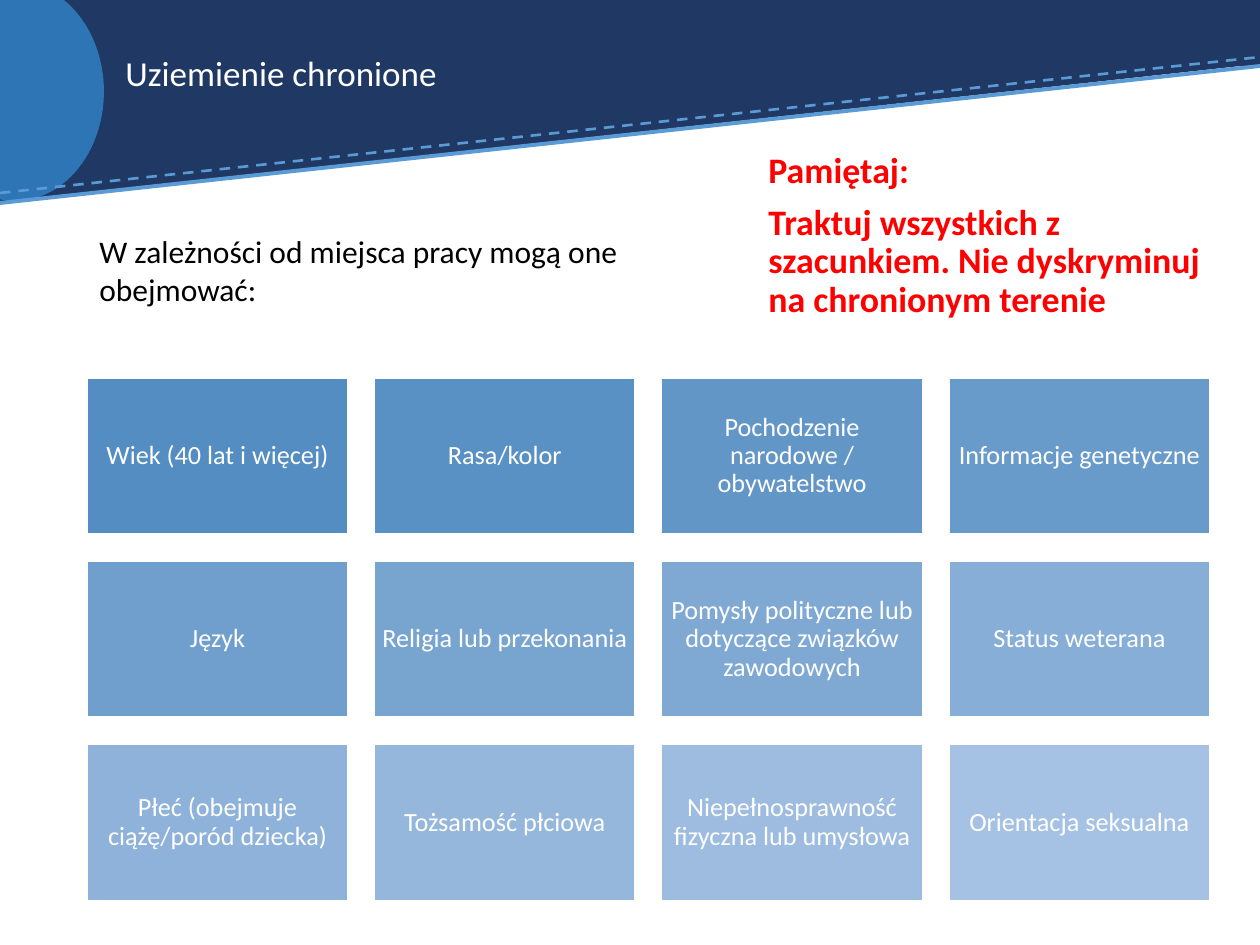
from lxml import etree
from pptx import Presentation
from pptx.dml.color import RGBColor
from pptx.enum.dml import MSO_LINE
from pptx.enum.shapes import MSO_CONNECTOR, MSO_SHAPE
from pptx.enum.text import MSO_ANCHOR, PP_ALIGN
from pptx.oxml.ns import qn
from pptx.util import Pt

RECTANGLE = MSO_SHAPE.RECTANGLE
TRIANGLE = MSO_SHAPE.RIGHT_TRIANGLE
OVAL = MSO_SHAPE.OVAL
STRAIGHT = MSO_CONNECTOR.STRAIGHT
DASH = MSO_LINE.DASH
TOP, MIDDLE = MSO_ANCHOR.TOP, MSO_ANCHOR.MIDDLE
LEFT, CENTER = PP_ALIGN.LEFT, PP_ALIGN.CENTER

EMU_PER_PX = 914400 / 126
NAVY, BLUE, ACCENT = "203864", "2E75B6", "5B9BD5"
WHITE, BLACK, RED = "FFFFFF", "000000", "FF0000"
TILE_START, TILE_END = (83, 141, 193), (165, 193, 227)
COLUMNS = 4
PROTECTED_GROUNDS = [
    "Wiek (40 lat i więcej)",
    "Rasa/kolor",
    "Pochodzenie narodowe / obywatelstwo",
    "Informacje genetyczne",
    "Język",
    "Religia lub przekonania",
    "Pomysły polityczne lub dotyczące związków zawodowych",
    "Status weterana",
    "Płeć (obejmuje ciążę/poród dziecka)",
    "Tożsamość płciowa",
    "Niepełnosprawność fizyczna lub umysłowa",
    "Orientacja seksualna",
]


def px(length):
    return round(length * EMU_PER_PX)


def color(code):
    return RGBColor.from_string(code)


def write(shape, *paragraphs, size, ink, bold=False, align=LEFT, anchor=TOP,
          spacing=0.9, gap=0, inset=None):
    frame = shape.text_frame
    frame.word_wrap = True
    frame.vertical_anchor = anchor
    if inset is not None:
        frame.margin_left = frame.margin_right = px(inset)
        frame.margin_top = frame.margin_bottom = px(inset)
    for index, text in enumerate(paragraphs):
        paragraph = frame.add_paragraph() if index else frame.paragraphs[0]
        paragraph.alignment = align
        paragraph.line_spacing = spacing
        if index:
            paragraph.space_before = Pt(gap)
        run = paragraph.add_run()
        run.text = text
        run.font.name = "Calibri"
        run.font.size = Pt(size)
        run.font.bold = bold
        run.font.color.rgb = color(ink)


def add_text(slide, box, *paragraphs, **text_format):
    write(slide.shapes.add_textbox(*map(px, box)), *paragraphs, **text_format)


def add_block(slide, kind, box, fill, outline=None):
    block = slide.shapes.add_shape(kind, *map(px, box))
    block.shadow.inherit = False
    block.fill.solid()
    block.fill.fore_color.rgb = color(fill)
    if outline:
        block.line.color.rgb = color(outline)
        block.line.width = Pt(1)
    else:
        block.line.fill.background()
    return block


def add_line(slide, ends, width, dash=None):
    line = slide.shapes.add_connector(STRAIGHT, *map(px, ends))
    line.line.color.rgb = color(ACCENT)
    line.line.width = Pt(width)
    if dash:
        line.line.dash_style = dash
    etree.SubElement(line._element.spPr, qn("a:effectLst"))


def add_header(slide):
    add_block(slide, RECTANGLE, (0, 0, 1260, 66), NAVY)
    slope = add_block(slide, TRIANGLE, (0, 64, 1260, 138), NAVY)
    slope._element.spPr.find(qn("a:xfrm")).set("flipV", "1")
    add_block(slide, OVAL, (-74, -18, 178, 219), BLUE)
    add_line(slide, (0, 193, 1260, 57), 1.5, DASH)
    add_line(slide, (0, 203, 1260, 66), 2.25)
    add_text(slide, (113, 25, 1017, 101), "Uziemienie chronione",
             size=20, ink=WHITE, anchor=MIDDLE)


def tile_color(position):
    share = position / (len(PROTECTED_GROUNDS) - 1)
    return "".join(f"{int(start + (end - start) * share):02X}"
                   for start, end in zip(TILE_START, TILE_END))


def add_tiles(slide):
    for position, ground in enumerate(PROTECTED_GROUNDS):
        row, column = divmod(position, COLUMNS)
        box = (87 + 287.3 * column, 378 + 183.3 * row, 261, 156)
        tile = add_block(slide, RECTANGLE, box, tile_color(position), WHITE)
        write(tile, ground, size=15, ink=WHITE, align=CENTER,
              anchor=MIDDLE, inset=8)


def main():
    deck = Presentation()
    deck.slide_width, deck.slide_height = px(1260), px(945)
    slide = deck.slides.add_slide(deck.slide_layouts[6])
    add_header(slide)
    add_text(slide, (756, 146, 476, 214), "Pamiętaj:",
             "Traktuj wszystkich z szacunkiem. Nie dyskryminuj na chronionym terenie",
             size=20.5, ink=RED, bold=True, gap=7.5)
    add_tiles(slide)
    add_text(slide, (87, 226, 581, 88),
             "W zależności od miejsca pracy mogą one obejmować:",
             size=18, ink=BLACK, spacing=1.0)
    deck.save("out.pptx")


if __name__ == "__main__":
    main()
